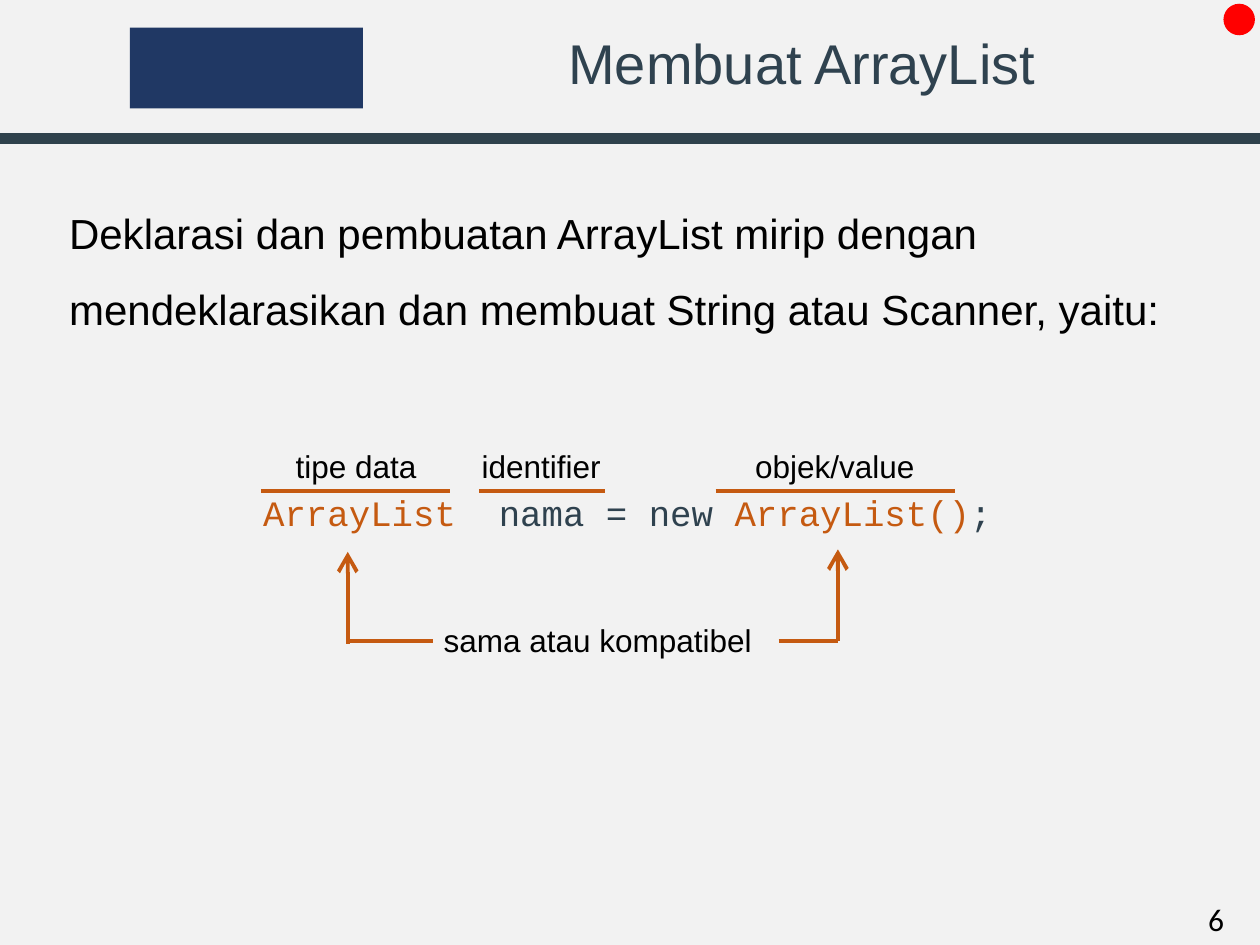
from lxml import etree
from pptx import Presentation
from pptx import util as u
from pptx.dml.color import RGBColor
from pptx.enum import shapes, text
from pptx.oxml import ns


class Theme:
    paper = RGBColor.from_string("F2F2F2")
    ink = RGBColor.from_string("000000")
    navy = RGBColor.from_string("203864")
    slate = RGBColor.from_string("2F424F")
    rule = RGBColor.from_string("2F424C")
    rust = RGBColor.from_string("C55A11")
    red = RGBColor.from_string("FF0000")
    sans, mono, page = "Arial", "Courier New", "Calibri"
    head, body, label, code = 32, 24, 18, 20.4


left, center = text.PP_ALIGN.LEFT, text.PP_ALIGN.CENTER
pres = Presentation()
pres.slide_width, pres.slide_height = u.Inches(10), u.Inches(7.5)
slide = pres.slides.add_slide(pres.slide_layouts[5])
slide.background.fill.solid()
slide.background.fill.fore_color.rgb = Theme.paper


def write(words, box, size, face=Theme.sans, color=Theme.ink, align=center, wrap=True):
    frame = slide.shapes.add_textbox(*map(u.Inches, box)).text_frame
    frame.word_wrap = wrap
    para = frame.paragraphs[0]
    para.text = words
    para.alignment = align
    para.font.size, para.font.name = u.Pt(size), face
    para.font.color.rgb = color
    return para


def draw(start, end, color=Theme.rust, width=2.25, arrow=False):
    line = slide.shapes.add_connector(
        shapes.MSO_CONNECTOR.STRAIGHT, *map(u.Inches, start + end))
    line.line.color.rgb = color
    line.line.width = u.Pt(width)
    if arrow:
        etree.SubElement(line.line._get_or_add_ln(), ns.qn("a:tailEnd"),
                         type="arrow", w="lg", len="lg")
    etree.SubElement(line._element.spPr, ns.qn("a:effectLst"))


write("6", (9.49, 7.09, 0.5, 0.4), Theme.label, Theme.page, align=left, wrap=False)
draw((0, 1.1), (10, 1.1), Theme.rule, 6)

title = slide.shapes.title
title.left, title.top = u.Inches(3.24), u.Inches(0.23)
title.width, title.height = u.Inches(6.25), u.Inches(0.6)
title.text_frame.vertical_anchor = text.MSO_ANCHOR.MIDDLE
para = title.text_frame.paragraphs[0]
para.text = "Membuat ArrayList"
para.alignment = center
para.line_spacing = 0.9
para.font.size, para.font.name = u.Pt(Theme.head), Theme.sans
para.font.color.rgb = Theme.slate

code = write("", (1.99, 3.91, 6.02, 0.42), Theme.code, Theme.mono, Theme.slate, left)
code.line_spacing = 0.8
for words, color in (
    ("ArrayList  ", Theme.rust),
    ("nama = new ", Theme.slate),
    ("ArrayList()", Theme.rust),
    (";", Theme.slate),
):
    run = code.add_run()
    run.text = words
    run.font.color.rgb = color

intro = write(
    "Deklarasi dan pembuatan ArrayList mirip dengan "
    "mendeklarasikan dan membuat String atau Scanner, yaitu:",
    (0.45, 1.4, 9.1, 1.24), Theme.body, align=left)
intro.line_spacing = 1.5

write("sama atau kompatibel", (3.36, 4.88, 2.77, 0.4), Theme.label)
draw((2.76, 5.09), (3.44, 5.09))
draw((6.18, 5.09), (6.65, 5.09))
draw((6.65, 5.09), (6.65, 4.36), arrow=True)
draw((2.76, 5.11), (2.76, 4.38), arrow=True)

for words, x, width, start, end in (
    ("tipe data", 2, 1.65, 2.07, 3.57),
    ("identifier", 3.7, 1.19, 3.8, 4.8),
    ("objek/value", 5.8, 1.65, 5.68, 7.58),
):
    write(words, (x, 3.5, width, 0.4), Theme.label)
    draw((start, 3.9), (end, 3.9))

for kind, box, color in (
    (shapes.MSO_SHAPE.RECTANGLE, (1.03, 0.22, 1.85, 0.64), Theme.navy),
    (shapes.MSO_SHAPE.OVAL, (9.71, 0.03, 0.25, 0.25), Theme.red),
):
    shape = slide.shapes.add_shape(kind, *map(u.Inches, box))
    shape.shadow.inherit = False
    shape.fill.solid()
    shape.fill.fore_color.rgb = color
    shape.line.fill.background()

pres.save("out.pptx")
